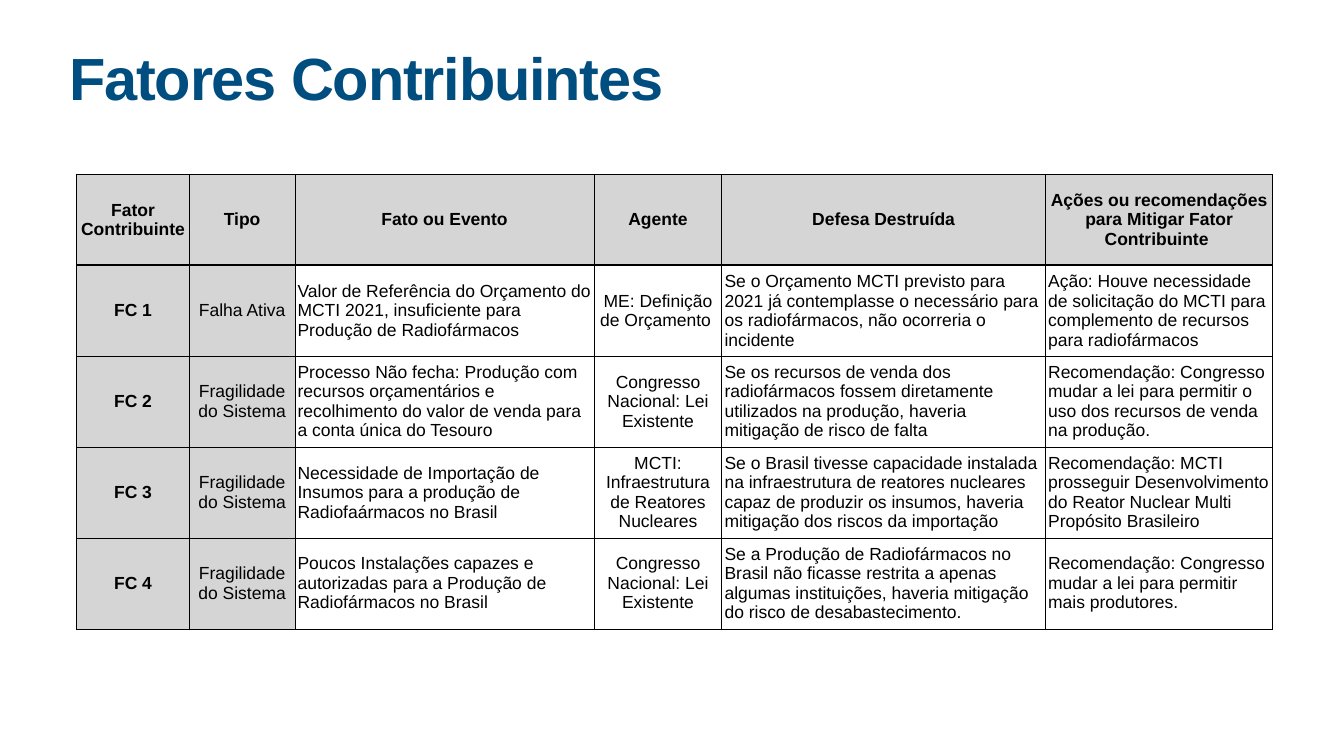
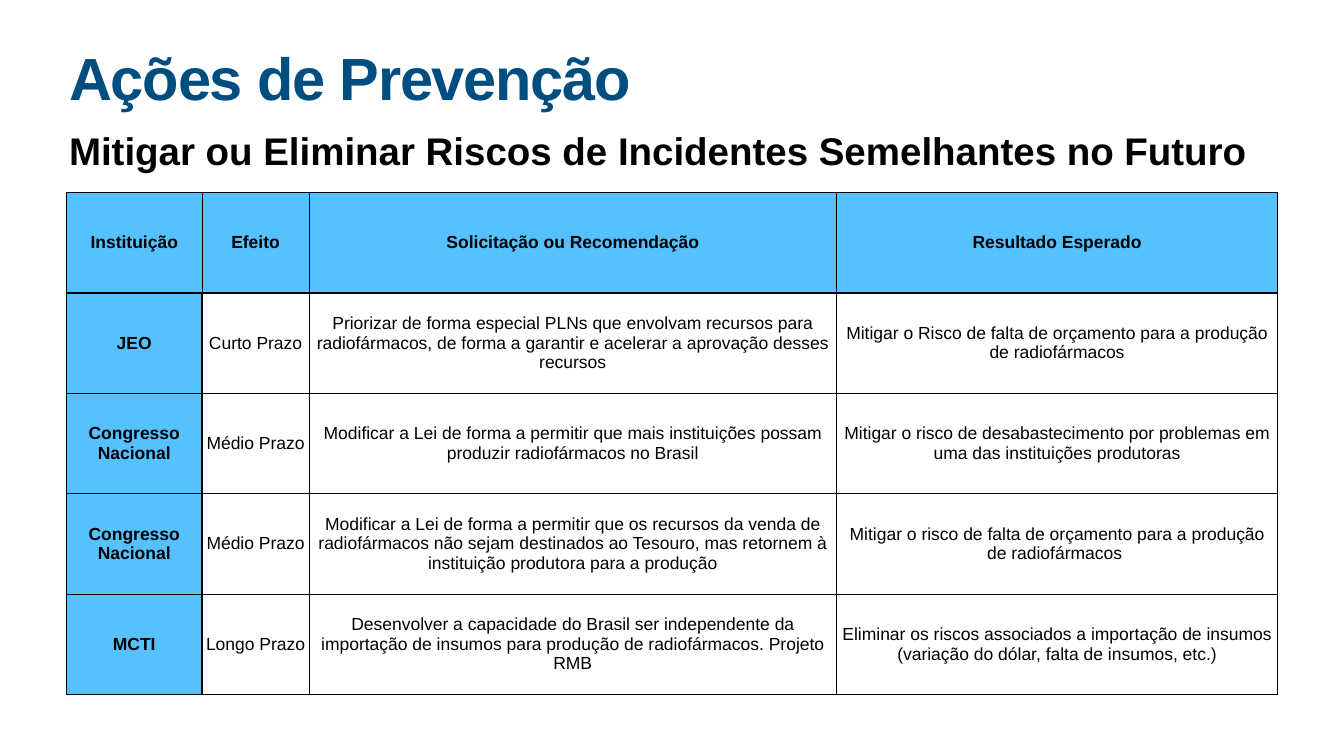
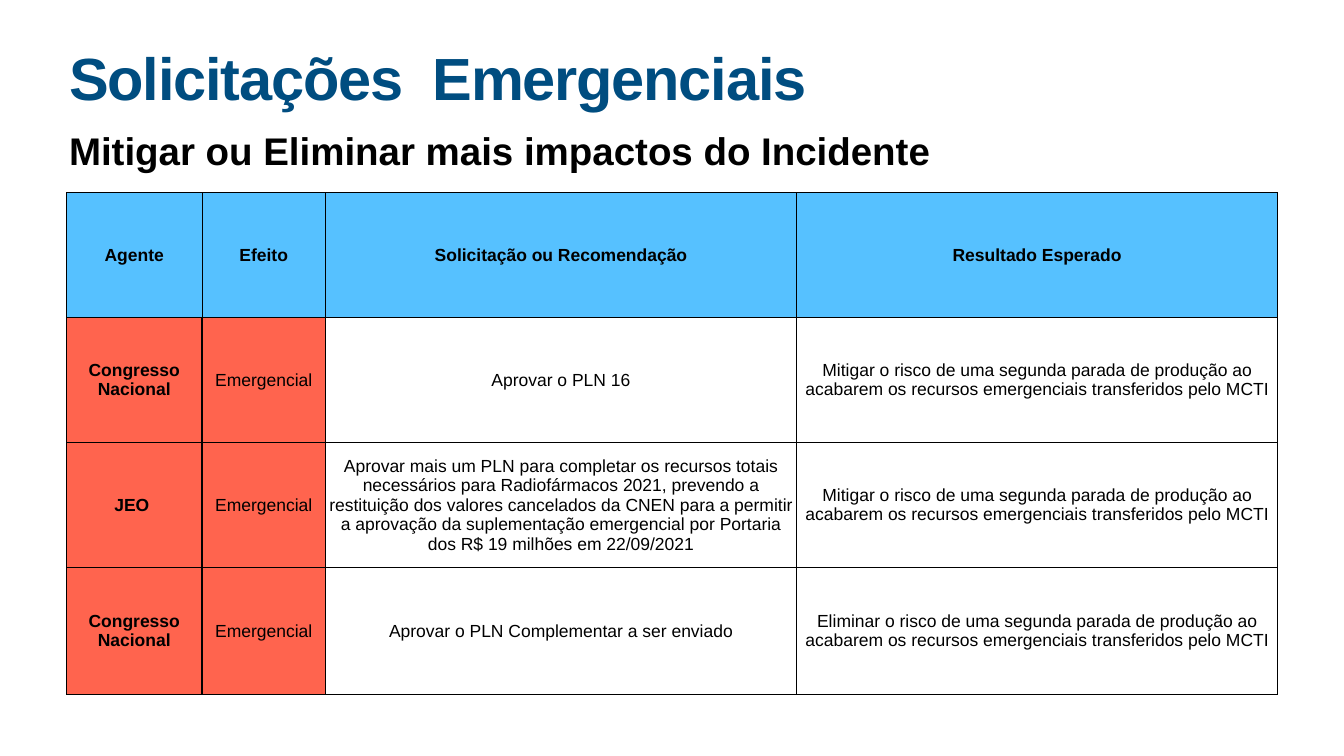
from lxml import etree
from pptx import Presentation
from pptx.dml.color import RGBColor
from pptx.enum.text import MSO_ANCHOR, PP_ALIGN
from pptx.oxml.ns import qn
from pptx.util import Cm, Pt

NAVY = RGBColor(0x00, 0x4D, 0x80)
BLACK = RGBColor(0x00, 0x00, 0x00)
GRAY = RGBColor(0xD5, 0xD5, 0xD5)
SKY = RGBColor(0x56, 0xC1, 0xFF)
CORAL = RGBColor(0xFF, 0x64, 0x4E)

TOP, MIDDLE = MSO_ANCHOR.TOP, MSO_ANCHOR.MIDDLE
LEFT, CENTER = PP_ALIGN.LEFT, PP_ALIGN.CENTER

TITLE_FORMAT = {"size": Pt(85), "bold": True, "name": "Arial"}
SUBTITLE_FORMAT = {"size": Pt(55), "bold": True, "name": "Arial"}
CELL_FORMAT = {"size": Pt(25), "name": "Arial"}
MARGIN_SIDES = ("margin_left", "margin_top", "margin_right", "margin_bottom")
MARGIN_X, TEXT_WIDTH = 3.35, 61.04
THIN, THICK = Pt(1), Pt(3)

FACTORS = [
    ["Fator Contribuinte ", "Tipo", "Fato ou Evento", "Agente", "Defesa Destruída",
     "Ações ou recomendações para Mitigar Fator Contribuinte "],
    ["FC 1", "Falha Ativa",
     "Valor de Referência do Orçamento do MCTI 2021, insuficiente para Produção de Radiofármacos",
     "ME: Definição de Orçamento ",
     "Se o Orçamento MCTI previsto para 2021 já contemplasse o necessário para os "
     "radiofármacos, não ocorreria o incidente",
     "Ação: Houve necessidade de solicitação do MCTI para complemento de recursos para "
     "radiofármacos"],
    ["FC 2", "Fragilidade do Sistema",
     "Processo Não fecha: Produção com recursos orçamentários e recolhimento do valor de "
     "venda para a conta única do Tesouro",
     "Congresso Nacional: Lei Existente",
     "Se os recursos de venda dos radiofármacos fossem diretamente utilizados na produção, "
     "haveria mitigação de risco de falta",
     "Recomendação: Congresso mudar a lei para permitir o uso dos recursos de venda na produção."],
    ["FC 3", "Fragilidade do Sistema",
     "Necessidade de Importação de Insumos para a produção de Radiofaármacos no Brasil",
     "MCTI: Infraestrutura de Reatores Nucleares",
     "Se o Brasil tivesse capacidade instalada na infraestrutura de reatores nucleares capaz "
     "de produzir os insumos, haveria mitigação dos riscos da importação",
     "Recomendação: MCTI prosseguir Desenvolvimento do Reator Nuclear Multi Propósito Brasileiro"],
    ["FC 4", "Fragilidade do Sistema",
     "Poucos Instalações capazes e autorizadas para a Produção de Radiofármacos no Brasil",
     "Congresso Nacional: Lei Existente",
     "Se a Produção de Radiofármacos no Brasil não ficasse restrita a apenas algumas "
     "instituições, haveria mitigação do risco de desabastecimento.",
     "Recomendação: Congresso mudar a lei para permitir mais produtores."],
]

PREVENTION = [
    ["Instituição", "Efeito", "Solicitação ou Recomendação", "Resultado Esperado"],
    ["JEO", "Curto Prazo",
     "Priorizar de forma especial PLNs que envolvam recursos para radiofármacos, de forma a "
     "garantir e acelerar a aprovação desses recursos",
     "Mitigar o Risco de falta de orçamento para a produção de radiofármacos"],
    ["Congresso Nacional", "Médio Prazo",
     "Modificar a Lei de forma a permitir que mais instituições possam produzir radiofármacos "
     "no Brasil",
     "Mitigar o risco de desabastecimento por problemas em uma das instituições produtoras"],
    ["Congresso Nacional", "Médio Prazo",
     "Modificar a Lei de forma a permitir que os recursos da venda de radiofármacos não sejam "
     "destinados ao Tesouro, mas retornem à instituição produtora para a produção",
     "Mitigar o risco de falta de orçamento para a produção de radiofármacos "],
    ["MCTI", "Longo Prazo",
     "Desenvolver a capacidade do Brasil ser independente da importação de insumos para "
     "produção de radiofármacos. Projeto RMB",
     "Eliminar os riscos associados a importação de insumos (variação do dólar, falta de "
     "insumos, etc.)"],
]

SECOND_STOP = ("o risco de uma segunda parada de produção ao acabarem os recursos "
               "emergenciais transferidos pelo MCTI")
EMERGENCY = [
    ["Agente", "Efeito", "Solicitação ou Recomendação", "Resultado Esperado"],
    ["Congresso Nacional", "Emergencial", "Aprovar o PLN 16", f"Mitigar {SECOND_STOP}"],
    ["JEO ", "Emergencial",
     "Aprovar mais um PLN para completar os recursos totais necessários para Radiofármacos "
     "2021, prevendo a restituição dos valores cancelados da CNEN para a permitir a aprovação "
     "da suplementação emergencial por Portaria dos R$ 19 milhões em 22/09/2021",
     f"Mitigar {SECOND_STOP}"],
    ["Congresso Nacional", "Emergencial", "Aprovar o PLN Complementar a ser enviado",
     f"Eliminar {SECOND_STOP}"],
]


class IncidentDeck:
    """Holds the shared style and the current slide of the incident report."""

    def __init__(self):
        self.prs = Presentation()
        self.prs.slide_width, self.prs.slide_height = Cm(67.74), Cm(38.1)
        self.slide = None

    def new_slide(self, title, subtitle=None):
        self.slide = self.prs.slides.add_slide(self.prs.slide_layouts[6])
        heading = self.text(title, 2.64, 3.99, 0.14, TITLE_FORMAT, NAVY)
        heading.line_spacing = 0.8
        heading.runs[0]._r.get_or_add_rPr().set("spc", "-170")
        if subtitle:
            self.text(subtitle, 6.25, 2.59, 0.13, SUBTITLE_FORMAT, BLACK)

    def text(self, words, top, height, inset, font_format, color):
        frame = self.slide.shapes.add_textbox(
            Cm(MARGIN_X), Cm(top), Cm(TEXT_WIDTH), Cm(height)).text_frame
        frame.word_wrap = True
        frame.vertical_anchor = TOP
        self.set_margins(frame, inset)
        paragraph = frame.paragraphs[0]
        self.styled_run(paragraph, words, font_format, color)
        return paragraph

    def styled_run(self, paragraph, words, font_format, color):
        run = paragraph.add_run()
        run.text = words
        for attribute, value in font_format.items():
            setattr(run.font, attribute, value)
        run.font.color.rgb = color

    def set_margins(self, holder, inset):
        for side in MARGIN_SIDES:
            setattr(holder, side, Cm(inset))

    def table(self, rows, left, top, widths, heights, header_fill, column_fills, left_columns=()):
        table = self.slide.shapes.add_table(
            len(rows), len(widths), Cm(left), Cm(top),
            Cm(sum(widths)), Cm(sum(heights))).table
        table.first_row = table.horz_banding = False
        for column, width in zip(table.columns, widths):
            column.width = Cm(width)
        for row, height in zip(table.rows, heights):
            row.height = Cm(height)
        for r, row_texts in enumerate(rows):
            for c, words in enumerate(row_texts):
                is_header = r == 0
                fill = header_fill if is_header else column_fills.get(c)
                align = LEFT if c in left_columns and not is_header else CENTER
                cell = table.cell(r, c)
                self.borders(cell, r, c)
                self.cell(cell, words, fill, align, is_header or c == 0)

    def cell(self, cell, words, fill, align, bold):
        cell.vertical_anchor = MIDDLE
        self.set_margins(cell, 0.14)
        if fill is None:
            cell.fill.background()
        else:
            cell.fill.solid()
            cell.fill.fore_color.rgb = fill
        paragraph = cell.text_frame.paragraphs[0]
        paragraph.alignment = align
        self.styled_run(paragraph, words, {**CELL_FORMAT, "bold": bold}, BLACK)

    def borders(self, cell, r, c):
        thick_edges = {
            "L": r > 0 and c == 1,
            "R": r > 0 and c == 0,
            "T": r == 1 and c > 0,
            "B": r == 0,
        }
        properties = cell._tc.get_or_add_tcPr()
        for side, thick in thick_edges.items():
            line = etree.SubElement(properties, qn(f"a:ln{side}"), w=str(THICK if thick else THIN))
            solid = etree.SubElement(line, qn("a:solidFill"))
            etree.SubElement(solid, qn("a:srgbClr"), val=str(BLACK))


def main():
    deck = IncidentDeck()

    deck.new_slide("Fatores Contribuintes")
    deck.table(FACTORS, 3.86, 8.79, [5.69, 5.31, 15.09, 6.43, 16.31, 11.46], [4.58] * 5,
               GRAY, {0: GRAY, 1: GRAY}, left_columns=(2, 4, 5))

    deck.new_slide("Ações de Prevenção",
                   "Mitigar ou Eliminar Riscos de Incidentes Semelhantes no Futuro")
    deck.table(PREVENTION, MARGIN_X, 9.7, [6.83, 5.4, 26.57, 22.25], [5.06] * 5,
               SKY, {0: SKY})

    deck.new_slide("Solicitações  Emergenciais",
                   "Mitigar ou Eliminar mais impactos do Incidente")
    deck.table(EMERGENCY, MARGIN_X, 9.7, [6.83, 6.22, 23.74, 24.26], [6.3, 6.3, 6.3, 6.4],
               SKY, {0: CORAL, 1: CORAL})

    deck.prs.save("out.pptx")


if __name__ == "__main__":
    main()
